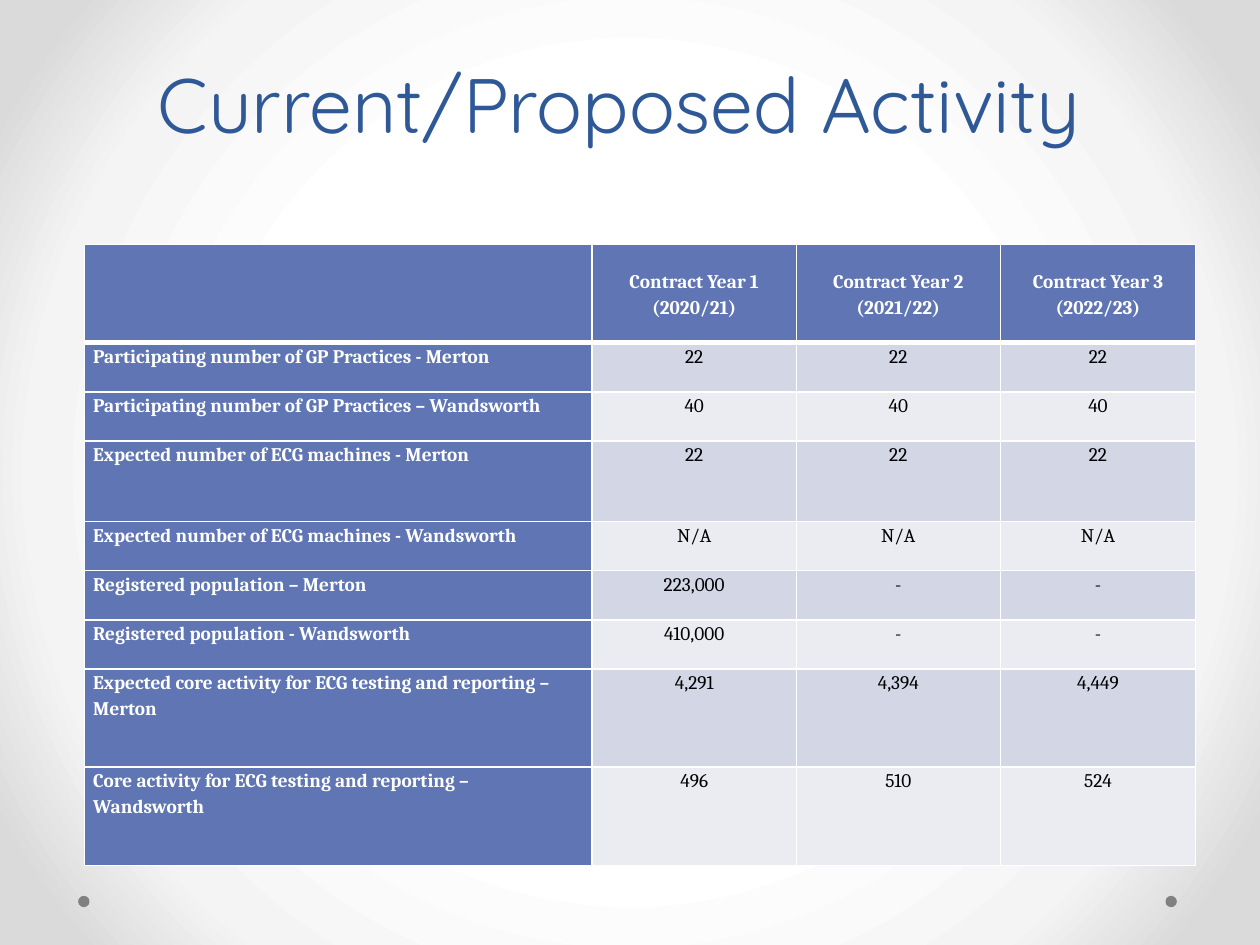
"""Build the Current/Proposed Activity slide with its contract table."""
from lxml import etree
from pptx import Presentation
from pptx.dml.color import RGBColor
from pptx.enum.shapes import MSO_SHAPE
from pptx.enum.text import MSO_ANCHOR, PP_ALIGN
from pptx.oxml import parse_xml
from pptx.oxml.ns import nsdecls, qn
from pptx.util import Inches, Pt

OVAL = MSO_SHAPE.OVAL
MIDDLE, TOP, BOTTOM = MSO_ANCHOR.MIDDLE, MSO_ANCHOR.TOP, MSO_ANCHOR.BOTTOM
LEFT, CENTER = PP_ALIGN.LEFT, PP_ALIGN.CENTER

COLORS = {
    "title": "2F5897",
    "header": "6076B4",
    "odd_row": "D2D6E5",
    "even_row": "EAECF2",
    "white": "FFFFFF",
    "black": "000000",
    "dot": "808080",
}
BACKGROUND_STOPS = [(50, "FFFFFF"), (76, "F4F4F4"), (92, "DADADA")]
COLUMN_WIDTHS = [4.03, 1.62, 1.62, 1.55]
ROW_HEIGHTS = [0.78, 0.39, 0.39, 0.64, 0.39, 0.39, 0.39, 0.78, 0.78]
ROWS = [
    ["", "Contract Year 1 (2020/21)", "Contract Year 2 (2021/22)", "Contract Year 3 (2022/23)"],
    ["Participating number of GP Practices - Merton", "22", "22", "22"],
    ["Participating number of GP Practices – Wandsworth", "40", "40", "40"],
    ["Expected number of ECG machines - Merton", "22", "22", "22"],
    ["Expected number of ECG machines - Wandsworth", "N/A", "N/A", "N/A"],
    ["Registered population – Merton", "223,000", "-", "-"],
    ["Registered population - Wandsworth", "410,000", "-", "-"],
    ["Expected core activity for ECG testing and reporting – Merton", "4,291", "4,394", "4,449"],
    ["Core activity for ECG testing and reporting – Wandsworth", "496", "510", "524"],
]


def add_text(paragraph, text, font_name, size, color, bold=False):
    run = paragraph.add_run()
    run.text = text
    run.font.name = font_name
    run.font.size = Pt(size)
    run.font.bold = bold
    run.font.color.rgb = RGBColor.from_string(COLORS[color])


def set_borders(cell, bottom_width):
    properties = cell._tc.get_or_add_tcPr()
    widths = {"a:lnL": 1, "a:lnR": 1, "a:lnT": 1, "a:lnB": bottom_width}
    for position, (tag, width) in enumerate(widths.items()):
        line = etree.Element(qn(tag), w=str(Pt(width)))
        fill = etree.SubElement(line, qn("a:solidFill"))
        etree.SubElement(fill, qn("a:srgbClr"), val=COLORS["white"])
        properties.insert(position, line)


presentation = Presentation()
presentation.slide_width = Inches(10)
presentation.slide_height = Inches(7.5)
slide = presentation.slides.add_slide(presentation.slide_layouts[6])

stops = "".join(
    f'<a:gs pos="{position * 1000}"><a:srgbClr val="{color}"/></a:gs>'
    for position, color in BACKGROUND_STOPS
)
background = parse_xml(
    f'<p:bg {nsdecls("p", "a")}><p:bgPr><a:gradFill rotWithShape="1"><a:gsLst>{stops}</a:gsLst>'
    '<a:path path="circle"><a:fillToRect l="50000" t="50000" r="50000" b="50000"/></a:path>'
    "</a:gradFill><a:effectLst/></p:bgPr></p:bg>"
)
slide.element.cSld.insert(0, background)

for left in (9.25, 0.62):
    dot = slide.shapes.add_shape(OVAL, Inches(left), Inches(7.11), Inches(0.09), Inches(0.09))
    dot.shadow.inherit = False
    dot.fill.solid()
    dot.fill.fore_color.rgb = RGBColor.from_string(COLORS["dot"])
    dot.line.fill.background()

title = slide.shapes.add_textbox(Inches(0.5), Inches(0), Inches(9), Inches(1.23))
title.text_frame.word_wrap = True
title.text_frame.vertical_anchor = BOTTOM
paragraph = title.text_frame.paragraphs[0]
paragraph.alignment = CENTER
paragraph.line_spacing = Pt(58)
add_text(paragraph, "Current/Proposed Activity ", "Quicksand", 44, "title")

table = slide.shapes.add_table(
    len(ROWS), len(COLUMN_WIDTHS), Inches(0.67), Inches(1.94),
    Inches(sum(COLUMN_WIDTHS)), Inches(sum(ROW_HEIGHTS)),
).table
for column, width in zip(table.columns, COLUMN_WIDTHS):
    column.width = Inches(width)
for row, height in zip(table.rows, ROW_HEIGHTS):
    row.height = Inches(height)

for row_index, values in enumerate(ROWS):
    is_header = row_index == 0
    band = "odd_row" if row_index % 2 else "even_row"
    for column_index, value in enumerate(values):
        is_label = column_index == 0
        is_heading = is_header or is_label
        cell = table.cell(row_index, column_index)
        cell.margin_left = cell.margin_right = Inches(0.07)
        cell.margin_top = cell.margin_bottom = Inches(0)
        cell.vertical_anchor = MIDDLE if is_header else TOP
        cell.fill.solid()
        cell.fill.fore_color.rgb = RGBColor.from_string(COLORS["header" if is_heading else band])
        set_borders(cell, 3 if is_header else 1)
        if value:
            paragraph = cell.text_frame.paragraphs[0]
            paragraph.alignment = LEFT if is_label else CENTER
            paragraph.line_spacing = 1.15
            paragraph.space_after = Pt(6)
            add_text(paragraph, value, "Cambria", 11, "white" if is_heading else "black", is_heading)

presentation.save("out.pptx")
